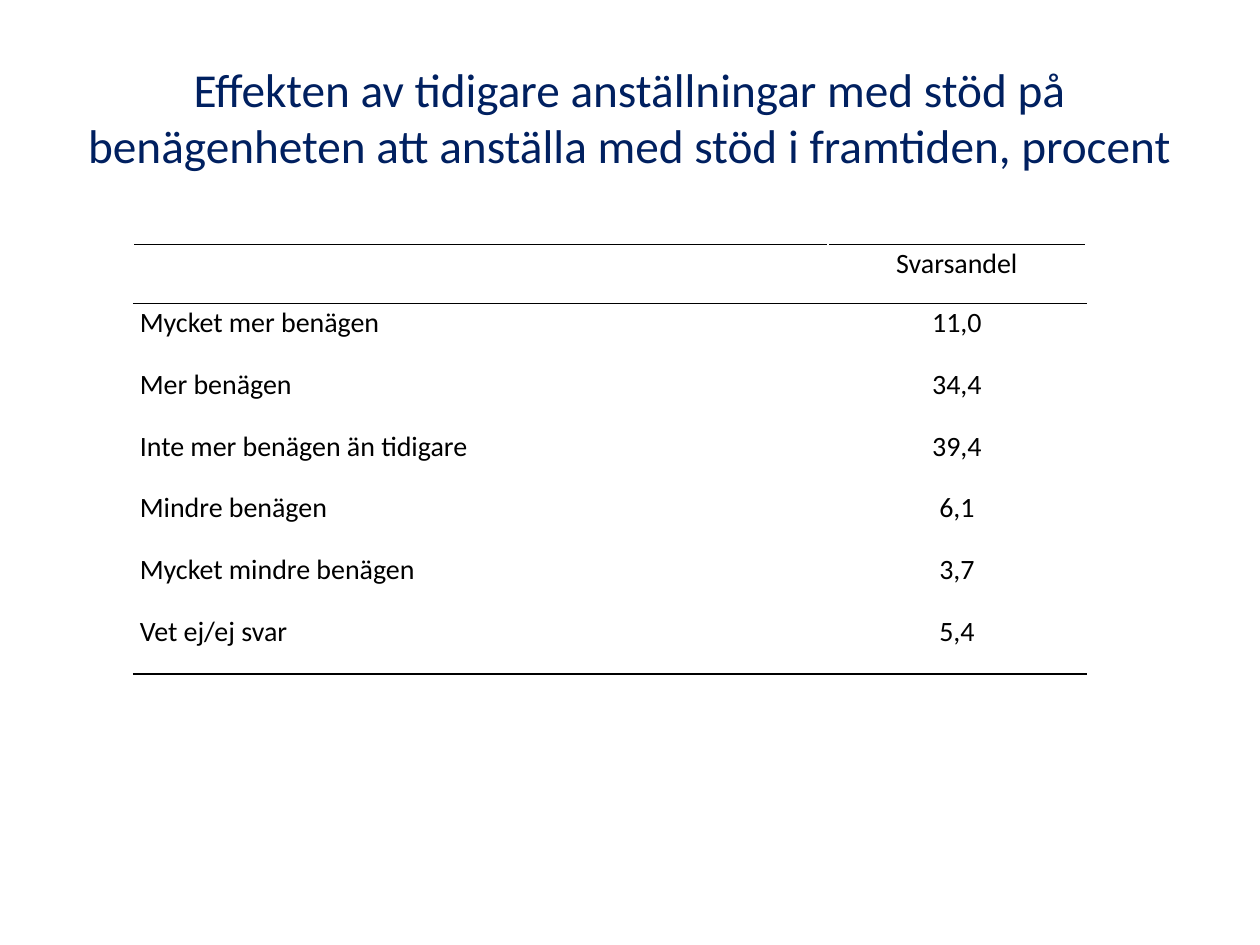
from lxml import etree
from pptx import Presentation
from pptx.dml.color import RGBColor
from pptx.enum.text import MSO_ANCHOR as Anchor, PP_ALIGN as Align
from pptx.oxml.ns import qn
from pptx.util import Inches, Pt

BLACK = "000000"
NAVY = "002060"


def add_run(paragraph, text, size, color):
    run = paragraph.add_run()
    run.text = text
    run.font.name = "Calibri"
    run.font.size = Pt(size)
    run.font.color.rgb = RGBColor.from_string(color)


def add_border(cell, side, position):
    line = etree.Element(qn(f"a:ln{side}"), w=str(Pt(1)))
    fill = etree.SubElement(line, qn("a:solidFill"))
    etree.SubElement(fill, qn("a:srgbClr"), val=BLACK)
    cell._tc.get_or_add_tcPr().insert(position, line)


presentation = Presentation()
presentation.slide_width = Inches(10)
presentation.slide_height = Inches(7.5)
slide = presentation.slides.add_slide(presentation.slide_layouts[6])

# Title
title = slide.shapes.add_textbox(Inches(0.5), Inches(0.3), Inches(8.99), Inches(1.25))
title.text_frame.word_wrap = True
title.text_frame.vertical_anchor = Anchor.MIDDLE
paragraph = title.text_frame.paragraphs[0]
paragraph.alignment = Align.CENTER
add_run(paragraph, "Effekten av tidigare anställningar med stöd på "
        "benägenheten att anställa med stöd i framtiden, procent", 27, NAVY)

# Table of answer shares
rows = [
    ("", "Svarsandel"),
    ("Mycket mer benägen", "11,0"),
    ("Mer benägen", "34,4"),
    ("Inte mer benägen än tidigare", "39,4"),
    ("Mindre benägen", "6,1"),
    ("Mycket mindre benägen", "3,7"),
    ("Vet ej/ej svar", "5,4"),
]
last_row = len(rows) - 1
table = slide.shapes.add_table(len(rows), 2, Inches(1.06), Inches(1.94),
                               Inches(7.56), Inches(3.43)).table
table.first_row = False
table.horz_banding = False
table.columns[0].width = Inches(5.51)
table.columns[1].width = Inches(2.05)

for row_index, texts in enumerate(rows):
    table.rows[row_index].height = Inches(0.49 if row_index else 0.47)
    for column_index, text in enumerate(texts):
        cell = table.cell(row_index, column_index)
        cell.fill.background()
        cell.margin_left = cell.margin_right = Inches(0.05)
        cell.margin_top = cell.margin_bottom = 0
        paragraph = cell.text_frame.paragraphs[0]
        paragraph.alignment = Align.CENTER if column_index else Align.LEFT
        paragraph.line_spacing = 1.07
        if text:
            add_run(paragraph, text, 16, BLACK)

        # Rules above and below the header, and under the last row
        if row_index in (0, last_row):
            add_border(cell, "B", 0)
        if row_index in (0, 1):
            add_border(cell, "T", 0)

presentation.save("out.pptx")
